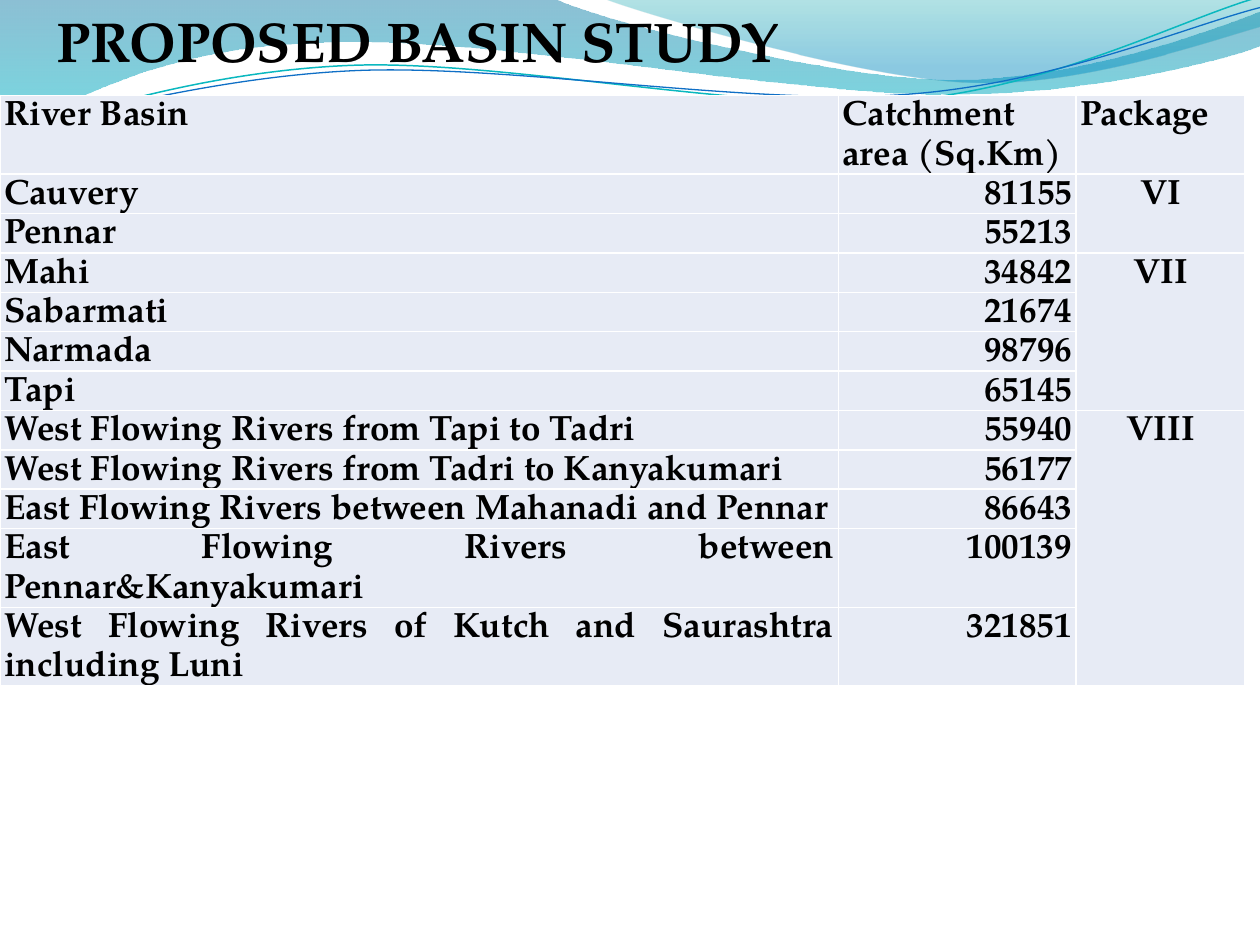
"""Build the slide that lists river basins, catchment areas and study packages."""
from math import cos, radians, sin

from lxml.etree import SubElement
from pptx import Presentation
from pptx.dml.color import RGBColor
from pptx.enum.text import MSO_ANCHOR, MSO_AUTO_SIZE, PP_ALIGN
from pptx.oxml.ns import qn
from pptx.util import Pt

FONT = "TeX Gyre Pagella"
COLORS = {
    "text": "000000", "cell": "E7EBF5",
    "deep blue": "0074A1", "aqua": "00C6CF", "teal": "00A1A9",
    "sky": "008BBF", "teal line": "0AB8BF", "blue line": "0F6FC6",
}
HEADER = ("River Basin", "Catchment area (Sq.Km)", "Package ")
PACKAGES = {
    "VI": [("Cauvery", 81155), ("Pennar", 55213)],
    "VII": [("Mahi", 34842), ("Sabarmati", 21674), ("Narmada", 98796), ("Tapi", 65145)],
    "VIII": [
        ("West Flowing Rivers from Tapi to Tadri", 55940),
        ("West Flowing Rivers from Tadri to Kanyakumari", 56177),
        ("East Flowing Rivers between Mahanadi and Pennar", 86643),
        ("East Flowing Rivers between Pennar&Kanyakumari", 100139),
        ("West Flowing Rivers of Kutch and Saurashtra including Luni", 321851),
    ],
}
COLUMN_WIDTHS = (479, 136, 96.5)
CURVE_TILT = -2.7
CURVE_CENTER = (359.3, 41.8)

LEFT_WAVE = [
    (0, 0), (316.8, -0.7),
    (342.7, 12.2, 478.1, 45.4, 545.8, 45.4), (614.2, 45.4, 689.8, 18.7, 720, 6.5),
    (720.7, 25.9),
    (707.8, 31.7, 626.4, 54.7, 537.1, 54), (447.8, 54, 275, 20.2, 185, 24.5),
    (92.9, 25.9, 33.1, 59.8, -0.7, 81.4), (0, 0),
]
RIGHT_WAVE = [
    (344.9, -0.7),
    (366.5, 7.9, 491, 44.6, 553.7, 46.8), (616.3, 49.7, 691.9, 23, 720, 15.1),
    (720, 0), (344.9, -0.7),
]
TEAL_CURVE = [
    (0, 79.9),
    (34.6, 67, 113.8, 41, 199.4, 37.4), (284.4, 33.8, 427, 64.1, 513.4, 57.6),
    (599.8, 51.1, 675.4, 10.8, 718.6, -1.4),
]
BLUE_CURVE = [
    (0, 74.9),
    (33.8, 69.1, 118.1, 43.9, 203.8, 40.3), (290.2, 36.7, 429.8, 60.5, 516.2, 54),
    (601.9, 48.2, 677.5, 15.1, 720, 4.3),
]


def rgb(name):
    """Return the named colour."""
    return RGBColor.from_string(COLORS[name])


def write_text(frame, text, size=20, align=PP_ALIGN.LEFT, spacing=None):
    """Write one bold paragraph into a text frame."""
    paragraph = frame.paragraphs[0]
    paragraph.alignment = align
    paragraph.line_spacing = spacing
    run = paragraph.add_run()
    run.text = text
    run.font.name, run.font.size, run.font.bold = FONT, Pt(size), True
    run.font.color.rgb = rgb("text")


def level_point(x, y, tilt):
    """Undo a tilt around the centre of the curves."""
    angle = radians(-tilt)
    dx, dy = x - CURVE_CENTER[0], y - CURVE_CENTER[1]
    return (Pt(CURVE_CENTER[0] + dx * cos(angle) - dy * sin(angle)),
            Pt(CURVE_CENTER[1] + dx * sin(angle) + dy * cos(angle)))


def add_outline(slide, segments, close=False, tilt=0):
    """Add a freeform of straight and cubic segments."""
    steps = [[level_point(x, y, tilt) for x, y in zip(segment[::2], segment[1::2])]
             for segment in segments]
    builder = slide.shapes.build_freeform(*steps[0][-1])
    builder.add_line_segments([step[-1] for step in steps[1:]], close=close)
    outline = builder.convert_to_shape()
    outline.shadow.inherit = False
    for line, step in zip(list(outline.element.iter(qn("a:lnTo"))), steps[1:]):
        if len(step) == 3:
            bend = SubElement(line.getparent(), qn("a:cubicBezTo"))
            for x, y in step:
                SubElement(bend, qn("a:pt"), x=str(x - outline.left), y=str(y - outline.top))
            line.getparent().replace(line, bend)
    outline.rotation = tilt
    return outline


def add_wave(slide, segments, stops):
    """Add a borderless wave with a translucent top-to-bottom gradient."""
    wave = add_outline(slide, segments, close=True)
    wave.line.fill.background()
    wave.fill.gradient()
    wave.fill.gradient_angle = 270
    for stop, (position, color, _) in zip(wave.fill.gradient_stops, stops):
        stop.position = position
        stop.color.rgb = rgb(color)
    colors = wave.element.spPr.iter(qn("a:srgbClr"))
    for color_element, (_, _, opacity) in zip(colors, stops):
        SubElement(color_element, qn("a:alpha"), val=str(opacity * 1000))


def add_curve(slide, segments, color, width):
    """Add an unfilled curved line."""
    curve = add_outline(slide, segments, tilt=CURVE_TILT)
    curve.fill.background()
    curve.line.color.rgb = rgb(color)
    curve.line.width = Pt(width)


def format_cell(cell):
    """Set the margins and fill of a table cell."""
    cell.margin_left = cell.margin_right = Pt(2.4)
    cell.margin_top = cell.margin_bottom = 0
    cell.fill.solid()
    cell.fill.fore_color.rgb = rgb("cell")


def add_basin_table(slide):
    """Add the table of basins grouped by package, with rows as high as their text."""
    row_count = 1 + sum(len(basins) for basins in PACKAGES.values())
    holder = slide.shapes.add_table(
        row_count, len(HEADER), 0, Pt(54.5), Pt(sum(COLUMN_WIDTHS)), Pt(441.4))
    table = holder.table
    table.first_row = table.horz_banding = False
    for column, width in zip(table.columns, COLUMN_WIDTHS):
        column.width = Pt(width)
    for row in table.rows:
        row.height = 0
    holder.height = Pt(441.4)
    for cell in table.iter_cells():
        format_cell(cell)

    def fill_cell(row, column, text, align):
        """Write text into the cell at a row and column."""
        write_text(table.cell(row, column).text_frame, text, align=align, spacing=1.15)

    for column, heading in enumerate(HEADER):
        fill_cell(0, column, heading, PP_ALIGN.JUSTIFY)
    row = 1
    for package, basins in PACKAGES.items():
        table.cell(row, 2).merge(table.cell(row + len(basins) - 1, 2))
        fill_cell(row, 2, package, PP_ALIGN.CENTER)
        for basin, area in basins:
            fill_cell(row, 0, basin, PP_ALIGN.JUSTIFY)
            fill_cell(row, 1, str(area), PP_ALIGN.RIGHT)
            row += 1


def place_title(slide, text):
    """Place the title above the waves."""
    title = slide.shapes.title
    title.left, title.top, title.width, title.height = Pt(25.2), 0, Pt(589.7), Pt(46)
    frame = title.text_frame
    frame.word_wrap = True
    frame.auto_size = MSO_AUTO_SIZE.SHAPE_TO_FIT_TEXT
    frame.vertical_anchor = MSO_ANCHOR.TOP
    write_text(frame, text, size=32)
    slide.shapes._spTree.append(title.element)


def main():
    """Build and save the slide."""
    presentation = Presentation()
    presentation.slide_width, presentation.slide_height = Pt(720), Pt(540)
    slide = presentation.slides.add_slide(presentation.slide_layouts[5])
    add_wave(slide, LEFT_WAVE, [(0, "deep blue", 45), (1, "aqua", 55)])
    add_wave(slide, RIGHT_WAVE, [(0, "teal", 30), (0.8, "sky", 45)])
    add_curve(slide, TEAL_CURVE, "teal line", 0.85)
    add_curve(slide, BLUE_CURVE, "blue line", 0.75)
    add_basin_table(slide)
    place_title(slide, "PROPOSED BASIN STUDY")
    presentation.save("out.pptx")


if __name__ == "__main__":
    main()
